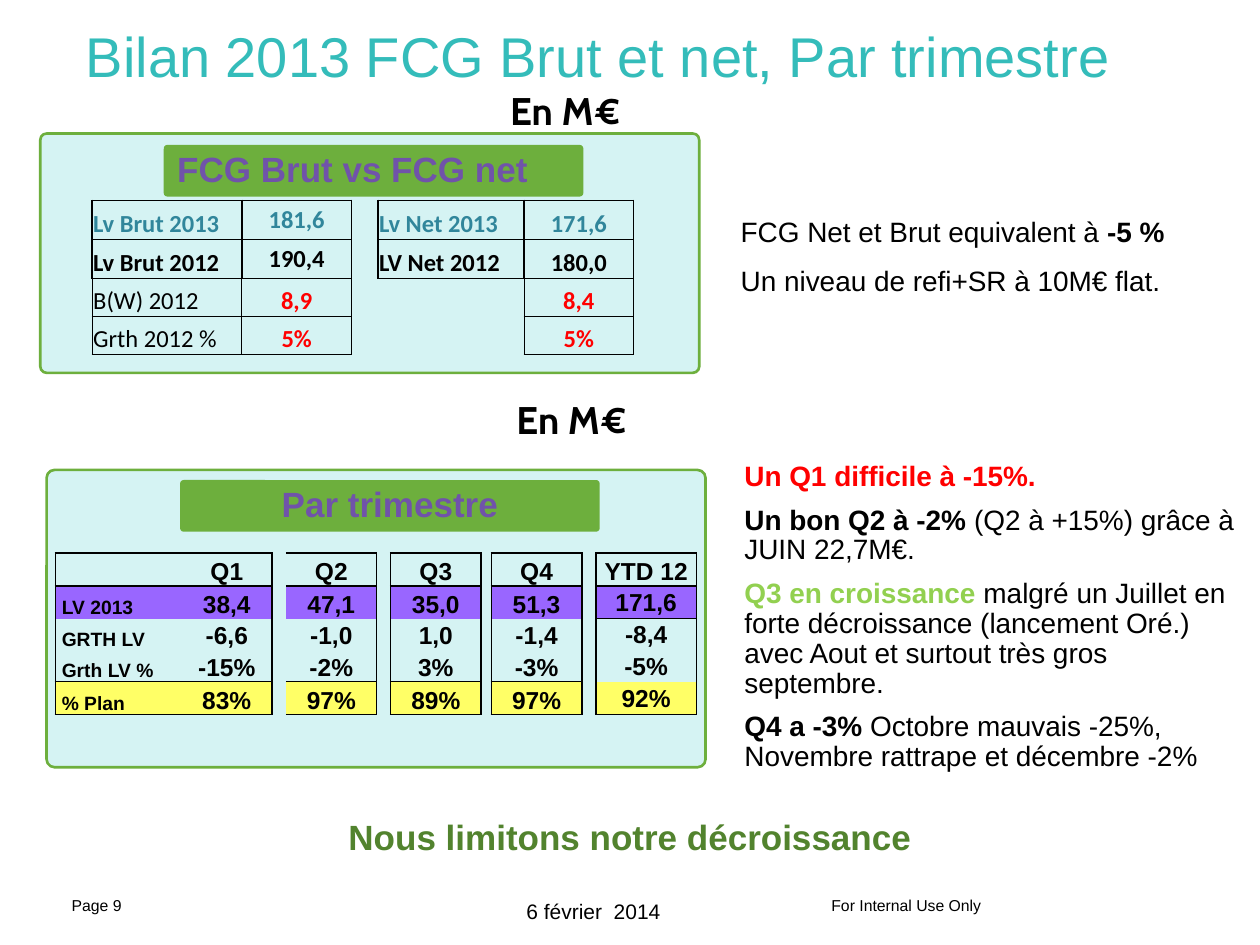
import lxml.etree
import pptx
import pptx.dml.color
import pptx.enum.shapes
import pptx.enum.text
import pptx.oxml.ns
import pptx.util

Inches = pptx.util.Inches
Pt = pptx.util.Pt
RGBColor = pptx.dml.color.RGBColor
ANCHOR = pptx.enum.text.MSO_ANCHOR
ALIGN = pptx.enum.text.PP_ALIGN
qn = pptx.oxml.ns.qn

BLACK = RGBColor(0x00, 0x00, 0x00)
RED = RGBColor(0xFF, 0x00, 0x00)
TURQUOISE = RGBColor(0x34, 0xBC, 0xBA)
PALE_BLUE = RGBColor(0xD5, 0xF3, 0xF3)
GREEN = RGBColor(0x6D, 0xAF, 0x3D)
DARK_GREEN = RGBColor(0x52, 0x83, 0x2E)
LIGHT_GREEN = RGBColor(0x92, 0xD0, 0x50)
PURPLE = RGBColor(0x70, 0x53, 0xAA)
TEAL = RGBColor(0x31, 0x86, 0x9B)
VIOLET = RGBColor(0x99, 0x66, 0xFF)
YELLOW = RGBColor(0xFF, 0xFF, 0x66)
NO_STYLE = "{2D5ABB26-0587-4C30-8999-92F81FD0307C}"


def write(frame, paragraphs, size, color=BLACK, bold=False, font="Arial", gap=0, **layout):
    frame.word_wrap = True
    for index, runs in enumerate(paragraphs):
        paragraph = frame.paragraphs[0] if index == 0 else frame.add_paragraph()
        if index:
            paragraph.space_before = Pt(gap)
        for name, value in layout.items():
            setattr(paragraph, name, value)
        for text, changes in runs:
            run = paragraph.add_run()
            run.text = text
            look = {"name": font, "size": Pt(size), "bold": bold, "color": color} | changes
            run.font.color.rgb = look.pop("color")
            for name, value in look.items():
                setattr(run.font, name, value)


def add_grid(place, widths, heights):
    table = slide.shapes.add_table(len(heights), len(widths), *map(Inches, place)).table
    table.first_row = table.horz_banding = False
    table._tbl.tblPr.find(qn("a:tableStyleId")).text = NO_STYLE
    for column, width in zip(table.columns, widths):
        column.width = Inches(width)
    for row, height in zip(table.rows, heights):
        row.height = Inches(height)
    return table


prs = pptx.Presentation()
prs.slide_width, prs.slide_height = Inches(10), Inches(7.5)
slide = prs.slides.add_slide(prs.slide_layouts[5])

title = slide.shapes.title
for name, value in {"left": 0.25, "top": 0.23, "width": 9, "height": 1.25}.items():
    setattr(title, name, Inches(value))
title_format = {"margin_left": 0, "margin_right": 0, "margin_top": 0, "margin_bottom": 0,
                "vertical_anchor": ANCHOR.TOP, "auto_size": pptx.enum.text.MSO_AUTO_SIZE.NONE}
for name, value in title_format.items():
    setattr(title.text_frame, name, value)
write(title.text_frame, [[("Bilan 2013 FCG Brut et net, Par trimestre", {})]], 32, TURQUOISE,
      alignment=ALIGN.CENTER, line_spacing=0.9)

sections = [
    ((0.32, 1.06, 5.23, 1.9), (1.3, 1.15, 3.33, 0.41), "FCG Brut vs FCG net", ALIGN.LEFT),
    ((0.37, 3.73, 5.23, 2.36), (1.43, 3.81, 3.33, 0.41), "Par trimestre", ALIGN.CENTER),
]
for panel_place, heading_place, heading_text, alignment in sections:
    for place, rounding, fill in [(panel_place, 0.027, PALE_BLUE), (heading_place, 0.067, GREEN)]:
        box = slide.shapes.add_shape(pptx.enum.shapes.MSO_SHAPE.ROUNDED_RECTANGLE, *map(Inches, place))
        box.shadow.inherit = False
        box.adjustments[0] = rounding
        box.fill.solid()
        box.fill.fore_color.rgb = fill
        if fill == PALE_BLUE:
            box.line.color.rgb = GREEN
            box.line.width = Pt(1.5)
        else:
            box.line.fill.background()
            box.text_frame.vertical_anchor = ANCHOR.MIDDLE
            write(box.text_frame, [[(heading_text, {})]], 20, PURPLE, True,
                  alignment=alignment, line_spacing=0.9)

strong = {"bold": True}
unit = {"size": 22, "bold": True, "font": "Cabin"}
texts = [
    ((3.95, 0.64, 1.42, 0.47), [[("En M€", {})]], unit),
    ((4, 3.09, 1.42, 0.47), [[("En M€", {})]], unit),
    ((5.78, 1.65, 4.22, 0.77), [
        [("FCG Net et Brut equivalent à ", {}), ("-5 %", strong)],
        [("Un niveau de refi+SR à 10M€ flat.", {})],
    ], {"size": 16, "gap": 9}),
    ((5.81, 3.62, 4.13, 2.66), [
        [("Un Q1 difficile à -15%.", strong | {"color": RED})],
        [("Un bon Q2 à -2% ", strong), ("(Q2 à +15%) grâce à JUIN 22,7M€.", {})],
        [("Q3 en croissance ", strong | {"color": LIGHT_GREEN}),
         ("malgré un Juillet en forte décroissance (lancement Oré.) avec Aout "
          "et surtout très gros septembre.", {})],
        [("Q4 a -3% ", strong), ("Octobre mauvais -25%, Novembre rattrape et décembre -2%", {})],
    ], {"size": 16, "gap": 8, "line_spacing": Pt(17)}),
    ((0.04, 6.42, 9.92, 0.44), [[("Nous limitons notre décroissance", {})]],
     {"size": 20, "color": DARK_GREEN, "bold": True, "alignment": ALIGN.CENTER}),
    ((0.47, 7.06, 1.92, 0.25), [[("Page 9", {})]], {"size": 9}),
    ((4.08, 7.08, 1.83, 0.17), [[("6 février  2014", {})]], {"size": 12}),
    ((6.5, 7.06, 1.42, 0.25), [[("For Internal Use Only", {})]], {"size": 9}),
]
for place, paragraphs, text_format in texts:
    write(slide.shapes.add_textbox(*map(Inches, place)).text_frame, paragraphs, **text_format)

yearly_rows = [
    ["Lv Brut 2013", "181,6", "", "Lv Net 2013", "171,6"],
    ["Lv Brut 2012", "190,4", "", "LV Net 2012", "180,0"],
    ["B(W) 2012", "8,9", "", "", "8,4"],
    ["Grth 2012 %", "5%", "", "", "5%"],
]
quarter_rows = [
    ["", "Q1", "", "Q2", "", "Q3", "", "Q4", "", "YTD 12"],
    ["LV 2013", "38,4", "", "47,1", "", "35,0", "", "51,3", "", "171,6"],
    ["GRTH LV", "-6,6", "", "-1,0", "", "1,0", "", "-1,4", "", "-8,4"],
    ["Grth LV %", "-15%", "", "-2%", "", "3%", "", "-3%", "", "-5%"],
    ["% Plan", "83%", "", "97%", "", "89%", "", "97%", "", "92%"],
]
yearly = add_grid((0.73, 1.59, 4.3, 1.22), [1.19, 0.87, 0.21, 1.16, 0.87], [0.31, 0.31, 0.3, 0.3])
quarterly = add_grid((0.44, 4.39, 5.09, 1.28),
                     [1, 0.72, 0.11, 0.72, 0.11, 0.72, 0.08, 0.72, 0.11, 0.8],
                     [0.26, 0.26, 0.25, 0.25, 0.26])
row_fills = {1: VIOLET, 4: YELLOW}
quarter_rules = {0: {"T": 1, "B": 1.5}, 1: {"T": 1.5}, 3: {"B": 0.5}, 4: {"T": 0.5, "B": 0.5}}
total_rules = {0: {"T": 1, "B": 1}, 1: {"T": 1, "B": 0.5}, 2: {"T": 0.5}, 4: {"B": 0.5}}

for table, rows in [(yearly, yearly_rows), (quarterly, quarter_rows)]:
    for r, values in enumerate(rows):
        for c, value in enumerate(values):
            cell = table.cell(r, c)
            label = table is quarterly and c == 0
            borders, fill, middle = {}, None, False
            if table is yearly:
                text_format = {"size": 14, "font": "Calibri", "bold": r < 2 or c > 0,
                               "color": TEAL if r == 0 else RED if r > 1 and c > 0 else BLACK}
                middle = c == 1 and r < 2
                if value:
                    borders = dict.fromkeys("LRTB", 1 if r < 2 else 0.5)
                    if r == 2:
                        borders["T"] = 1
            else:
                text_format = {"size": 11 if label else 14, "bold": True}
                middle = c == 9 and r > 0
                if value or label:
                    fill = row_fills.get(r)
                    rules = total_rules if c == 9 else quarter_rules
                    borders = dict.fromkeys("LRTB", 0) | rules.get(r, {})
                    if c in (0, 5, 7, 9):
                        borders["L"] = 1
                    if c > 0:
                        borders["R"] = 1
            cell_format = {"margin_left": Inches(0.05 if label else 0.01), "margin_right": Inches(0.01),
                           "margin_top": Inches(0.01), "margin_bottom": 0,
                           "vertical_anchor": ANCHOR.MIDDLE if middle else ANCHOR.BOTTOM}
            for name, setting in cell_format.items():
                setattr(cell, name, setting)
            for side in [side for side in "LRTB" if side in borders]:
                line = lxml.etree.SubElement(cell._tc.get_or_add_tcPr(), qn("a:ln" + side),
                                             w=str(Pt(borders[side])))
                if borders[side]:
                    solid = lxml.etree.SubElement(line, qn("a:solidFill"))
                    lxml.etree.SubElement(solid, qn("a:srgbClr"), val=str(BLACK))
                else:
                    lxml.etree.SubElement(line, qn("a:noFill"))
            if fill:
                cell.fill.solid()
                cell.fill.fore_color.rgb = fill
            else:
                cell.fill.background()
            if value:
                centred = c % 2 == 1 if table is quarterly else c in (1, 4)
                write(cell.text_frame, [[(value, {})]],
                      alignment=ALIGN.CENTER if centred else ALIGN.LEFT, **text_format)
            else:
                lxml.etree.SubElement(cell.text_frame.paragraphs[0]._p, qn("a:endParaRPr"), sz="800")

prs.save("out.pptx")
